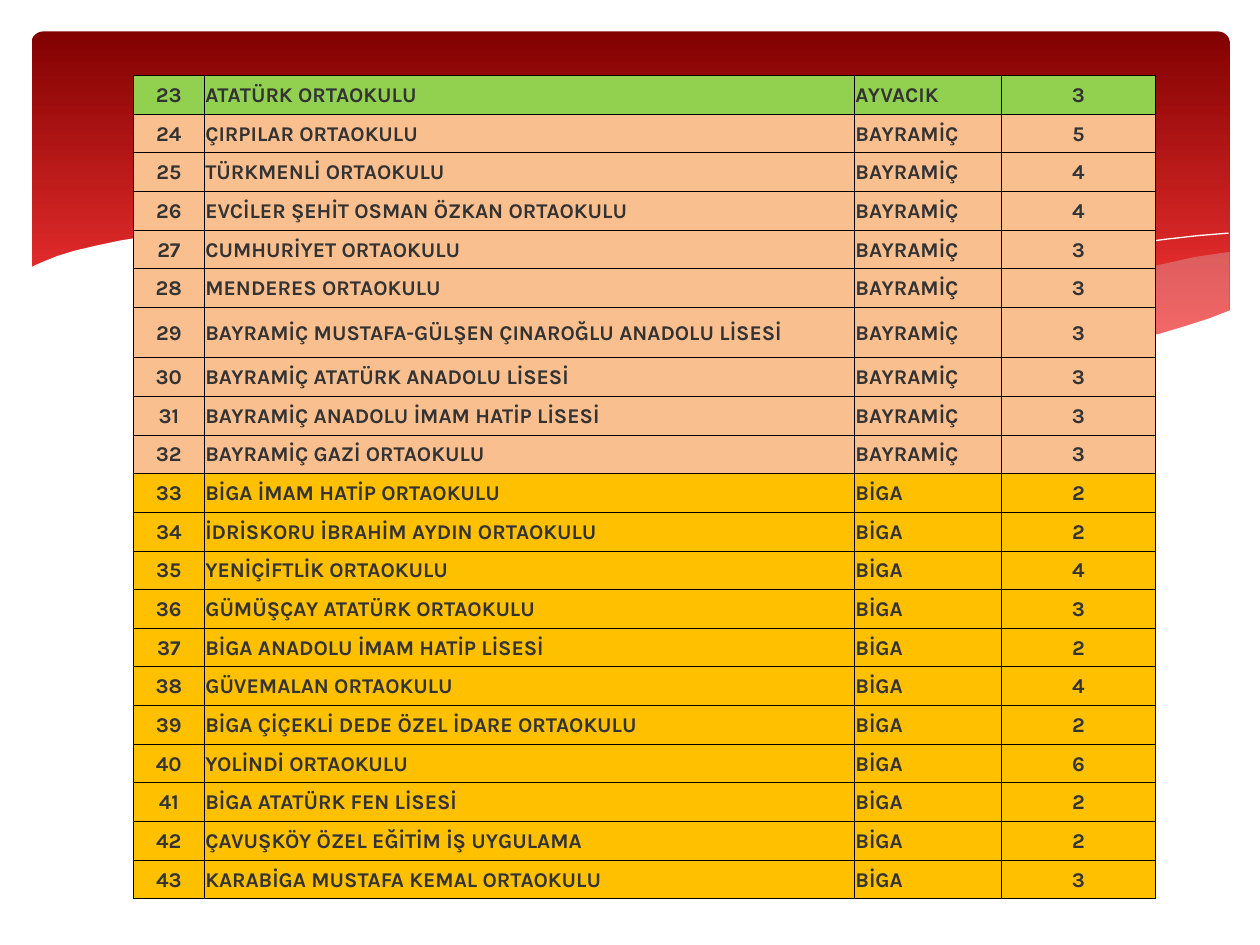
from dataclasses import dataclass
from lxml.etree import SubElement
from pptx import Presentation
from pptx.dml.color import RGBColor
from pptx.enum.shapes import MSO_SHAPE
from pptx.enum.text import MSO_ANCHOR, PP_ALIGN
from pptx.oxml.ns import qn
from pptx.util import Inches, Pt


@dataclass(frozen=True)
class Theme:
    font: str = "Karla"
    size: int = 12
    ink: str = "333333"
    rule: str = "000000"
    paper: str = "FFFFFF"
    mist: str = "DEDEE0"
    dark: str = "820101"
    red: str = "FE3737"
    green: str = "92D050"
    peach: str = "FABF8F"
    gold: str = "FFC000"


THEME = Theme()
COLS, ROWS = 1000, 750  # fine grid over the whole slide
FIRST = 23  # number of the first school

# District, row colour, and its schools with their counts
GROUPS = [
    ("AYVACIK", THEME.green, [("ATATÜRK ORTAOKULU", 3)]),
    ("BAYRAMİÇ", THEME.peach, [
        ("ÇIRPILAR ORTAOKULU", 5),
        ("TÜRKMENLİ ORTAOKULU", 4),
        ("EVCİLER ŞEHİT OSMAN ÖZKAN ORTAOKULU", 4),
        ("CUMHURİYET ORTAOKULU", 3),
        ("MENDERES ORTAOKULU", 3),
        ("BAYRAMİÇ MUSTAFA-GÜLŞEN ÇINAROĞLU ANADOLU LİSESİ", 3),
        ("BAYRAMİÇ ATATÜRK ANADOLU LİSESİ", 3),
        ("BAYRAMİÇ ANADOLU İMAM HATİP LİSESİ", 3),
        ("BAYRAMİÇ GAZİ ORTAOKULU", 3),
    ]),
    ("BİGA", THEME.gold, [
        ("BİGA İMAM HATİP ORTAOKULU", 2),
        ("İDRİSKORU İBRAHİM AYDIN ORTAOKULU", 2),
        ("YENİÇİFTLİK ORTAOKULU", 4),
        ("GÜMÜŞÇAY ATATÜRK ORTAOKULU", 3),
        ("BİGA ANADOLU İMAM HATİP LİSESİ", 2),
        ("GÜVEMALAN ORTAOKULU", 4),
        ("BİGA ÇİÇEKLİ DEDE ÖZEL İDARE ORTAOKULU", 2),
        ("YOLİNDİ ORTAOKULU", 6),
        ("BİGA ATATÜRK FEN LİSESİ", 2),
        ("ÇAVUŞKÖY ÖZEL EĞİTİM İŞ UYGULAMA", 2),
        ("KARABİGA MUSTAFA KEMAL ORTAOKULU", 3),
    ]),
]

# Wave outlines in grid columns and rows
RIGHT = [(975, 200), (948, 204), (921, 210), (891, 216), (861, 223), (805, 237),
         (753, 248), (706, 257), (661, 265), (691, 269), (719, 272), (745, 275),
         (769, 277), (803, 278), (835, 277), (863, 275), (889, 272), (913, 267),
         (935, 262), (949, 257), (963, 252), (976, 247), (976, 200)]
MIDDLE = [(893, 273), (866, 269), (837, 265), (807, 260), (775, 254), (741, 247),
          (706, 240), (668, 231), (629, 222), (598, 214), (569, 208), (541, 203),
          (514, 198), (489, 194), (442, 189), (399, 186), (361, 185), (328, 187),
          (286, 191), (323, 196), (362, 203), (404, 211), (449, 222), (491, 232),
          (530, 240), (584, 252), (634, 261), (680, 268), (722, 274), (761, 277),
          (796, 278), (828, 278), (857, 277), (876, 275)]
LONG = [(309, 195), (328, 192), (353, 189), (387, 187), (416, 187), (450, 188),
        (489, 190), (533, 194), (582, 200), (636, 208), (695, 219), (760, 233),
        (831, 251), (869, 261), (907, 272)]
SHORT = [(613, 257), (653, 246), (695, 235), (748, 223), (806, 210), (866, 199),
         (895, 194), (924, 190), (951, 187), (975, 185)]
FRONT = [(977, 246), (959, 253), (940, 259), (920, 265), (899, 269), (875, 273),
         (850, 275), (823, 277), (793, 276), (761, 275), (726, 272), (688, 268),
         (648, 262), (603, 254), (555, 245), (503, 233), (447, 220), (391, 207),
         (340, 197), (292, 190), (250, 186), (211, 184), (177, 184), (146, 185),
         (119, 187), (95, 191), (76, 195), (59, 199), (46, 203), (36, 207),
         (29, 210), (23, 213), (23, 329), (977, 329)]


def tint(color):
    return RGBColor.from_string(color)


def add_wave(slide, box, points, color, alpha=None):
    """Filled wave on the grid of the box."""
    shape = trace(slide, box, points, True)
    shape.fill.solid()
    shape.fill.fore_color.rgb = tint(color)
    shape.line.fill.background()
    if alpha:
        node = shape.fill._xPr.find(".//" + qn("a:srgbClr"))
        SubElement(node, qn("a:alpha"), val=str(alpha * 1000))


def add_curve(slide, box, points):
    """Hairline on the grid of the box."""
    shape = trace(slide, box, points, False)
    shape.fill.background()
    shape.line.color.rgb = tint(THEME.paper)
    shape.line.width = Pt(0)


def trace(slide, box, points, close):
    left, top, width, height = box
    pen = slide.shapes.build_freeform(*points[0], scale=(width / COLS, height / ROWS))
    pen.add_line_segments(points[1:], close=close)
    shape = pen.convert_to_shape(left, top)
    shape.shadow.inherit = False
    return shape


def add_banner(slide, box):
    """Red panel with its waves."""
    left, top, width, height = box
    panel = slide.shapes.add_shape(
        MSO_SHAPE.ROUNDED_RECTANGLE, left + int(width * 0.025),
        top + int(height / 30), int(width * 0.951), int(height * 0.36))
    panel.adjustments[0] = 0.034
    panel.shadow.inherit = False
    panel.line.fill.background()
    panel.fill.gradient()
    panel.fill.gradient_angle = 270
    stops = zip(panel.fill.gradient_stops, (THEME.dark, THEME.red), (0, 0.9))
    for stop, color, place in stops:
        stop.color.rgb = tint(color)
        stop.position = place

    add_wave(slide, box, RIGHT, THEME.mist, 29)
    add_wave(slide, box, MIDDLE, THEME.mist, 40)
    add_curve(slide, box, LONG)
    add_curve(slide, box, SHORT)
    add_wave(slide, box, FRONT, THEME.paper)


def style_cell(cell, text, color, align):
    cell.fill.solid()
    cell.fill.fore_color.rgb = tint(color)
    cell.vertical_anchor = MSO_ANCHOR.MIDDLE
    cell.margin_left = cell.margin_right = cell.margin_top = Inches(0.01)
    cell.margin_bottom = 0
    cell.text_frame.text = text
    para = cell.text_frame.paragraphs[0]
    para.alignment = align
    font = para.runs[0].font
    font.name, font.size, font.bold = THEME.font, Pt(THEME.size), True
    font.color.rgb = tint(THEME.ink)
    # Cell borders come before the fill
    props = cell._tc.get_or_add_tcPr()
    for spot, side in enumerate(("lnL", "lnR", "lnT", "lnB")):
        line = SubElement(props, qn("a:" + side), w=str(Pt(0.5)))
        fill = SubElement(line, qn("a:solidFill"))
        SubElement(fill, qn("a:srgbClr"), val=THEME.rule)
        props.insert(spot, line)


def add_schools(slide, box):
    """Table of schools, one colour for each district."""
    rows = [(name, place, count, color)
            for place, color, schools in GROUPS for name, count in schools]
    left, top, width, height = box
    table = slide.shapes.add_table(len(rows), 4, left, top, width, height).table
    table.first_row = table.horz_banding = False

    shares = (0.56, 5.16, 1.17, 1.22)
    for col, share in zip(table.columns, shares):
        col.width = int(width * share / sum(shares))
    weights = [1.3 if "MUSTAFA-GÜLŞEN" in row[0] else 1 for row in rows]
    for row, weight in zip(table.rows, weights):
        row.height = int(height * weight / sum(weights))

    aligns = (PP_ALIGN.CENTER, PP_ALIGN.LEFT, PP_ALIGN.LEFT, PP_ALIGN.CENTER)
    for index, (name, place, count, color) in enumerate(rows):
        texts = (str(FIRST + index), name, place, str(count))
        for cell, text, align in zip(table.rows[index].cells, texts, aligns):
            style_cell(cell, text, color, align)


def main():
    deck = Presentation()
    deck.slide_width, deck.slide_height = Inches(10), Inches(7.5)
    wide, high = deck.slide_width, deck.slide_height
    slide = deck.slides.add_slide(deck.slide_layouts[6])
    add_banner(slide, (0, 0, wide, high))
    add_schools(slide, (int(wide * 0.106), int(high * 0.08),
                        int(wide * 0.811), int(high * 0.872)))
    deck.save("out.pptx")


if __name__ == "__main__":
    main()
